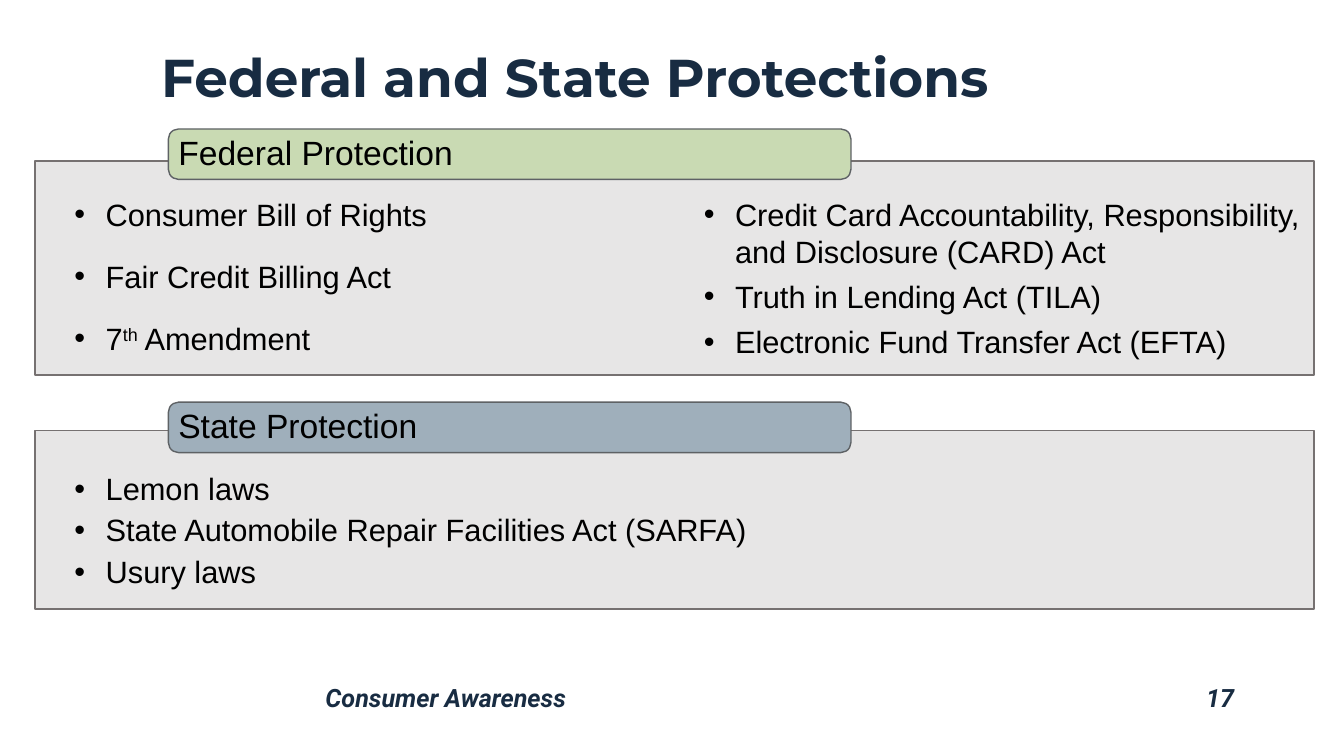
from lxml import etree
from pptx import Presentation
from pptx.dml.color import RGBColor
from pptx.enum.shapes import MSO_SHAPE
from pptx.enum.text import MSO_ANCHOR, PP_ALIGN
from pptx.oxml.ns import qn
from pptx.util import Inches, Pt

NAVY = RGBColor(0x18, 0x2C, 0x42)
BLACK = RGBColor(0x00, 0x00, 0x00)
PANEL_GRAY = RGBColor(0xE7, 0xE6, 0xE6)
PANEL_LINE = RGBColor(0x76, 0x71, 0x71)
TAB_GREEN = RGBColor(0xC9, 0xDA, 0xB3)
TAB_BLUE = RGBColor(0x9F, 0xAF, 0xBB)
TAB_LINE = RGBColor(0x5E, 0x62, 0x65)

# Content: a paragraph is a list of (text, is superscript) runs or a plain string
TITLE = "Federal and State Protections"
FOOTER = "Consumer Awareness"
PAGE_NUMBER = "17"
SECTIONS = [
    {
        "heading": "Federal Protection", "color": TAB_GREEN,
        "panel": (1.6, 2.12), "tab_top": 1.28,
        "heading_box": (1.67, 1.26, 4.32, 0.52),
        "list_top": 1.89, "columns": 2, "line_spacing": 1.0,
        "items": [
            "Consumer Bill of Rights",
            "Fair Credit Billing Act",
            [("7", False), ("th", True), (" Amendment", False)],
            "Credit Card Accountability, Responsibility, and Disclosure (CARD) Act",
            "Truth in Lending Act (TILA)",
            "Electronic Fund Transfer Act (EFTA)",
        ],
        "space_after": [18, 18, 18, 6, 6, 6],
    },
    {
        "heading": "State Protection", "color": TAB_BLUE,
        "panel": (4.27, 1.77), "tab_top": 3.99,
        "heading_box": (1.67, 4.01, 6.12, 0.48),
        "list_top": 4.65, "columns": 1, "line_spacing": 0.9,
        "items": [
            "Lemon laws",
            "State Automobile Repair Facilities Act (SARFA)",
            "Usury laws",
        ],
        "space_after": [6, 6, 6],
    },
]
PANEL_LEFT, PANEL_WIDTH = 0.35, 12.68
TAB_LEFT, TAB_WIDTH, TAB_HEIGHT = 1.67, 6.77, 0.5

presentation = Presentation()
presentation.slide_width = Inches(13.33)
presentation.slide_height = Inches(7.5)
slide = presentation.slides.add_slide(presentation.slide_layouts[6])


def add_bullet(paragraph):
    properties = paragraph._p.get_or_add_pPr()
    properties.set("marL", str(Inches(0.6)))
    properties.set("indent", str(Inches(-0.31)))
    etree.SubElement(properties, qn("a:buFont")).set("typeface", "Arial")
    etree.SubElement(properties, qn("a:buChar")).set("char", "•")


def add_text(paragraphs, box, size, font="Arial", color=BLACK, bold=False,
             italic=False, align=PP_ALIGN.LEFT, anchor=MSO_ANCHOR.TOP,
             line_spacing=0.9, space_after=None, bullets=False, columns=1):
    frame = slide.shapes.add_textbox(*map(Inches, box)).text_frame
    frame.word_wrap = True
    frame.vertical_anchor = anchor
    if columns > 1:
        frame._txBody.bodyPr.set("numCol", str(columns))
    for index, content in enumerate(paragraphs):
        paragraph = frame.paragraphs[0] if index == 0 else frame.add_paragraph()
        if bullets:
            add_bullet(paragraph)
        paragraph.alignment = align
        paragraph.line_spacing = line_spacing
        paragraph.space_before = Pt(0)
        paragraph.space_after = Pt(space_after[index] if space_after else 0)
        runs = [(content, False)] if isinstance(content, str) else content
        for text, superscript in runs:
            run = paragraph.add_run()
            run.text = text
            run.font.name = font
            run.font.size = Pt(size)
            run.font.bold = bold
            run.font.italic = italic
            run.font.color.rgb = color
            if superscript:
                run.font._element.set("baseline", "30000")


def add_box(kind, box, fill, line, line_width):
    shape = slide.shapes.add_shape(kind, *map(Inches, box))
    shape.shadow.inherit = False
    shape.fill.solid()
    shape.fill.fore_color.rgb = fill
    shape.line.color.rgb = line
    shape.line.width = Pt(line_width)
    return shape


# Title and footer
add_text([TITLE], (1.5, 0.11, 10.84, 1.02), 38, font="Montserrat", color=NAVY,
         bold=True, anchor=MSO_ANCHOR.BOTTOM)
footer_format = {"font": "Roboto", "color": NAVY, "bold": True, "italic": True}
add_text([FOOTER], (3.13, 6.75, 7.63, 0.38), 18, **footer_format)
add_text([PAGE_NUMBER], (10.76, 6.75, 1.58, 0.38), 18, align=PP_ALIGN.RIGHT,
         **footer_format)

# Panels, each with a heading tab and a bulleted list
for section in SECTIONS:
    top, height = section["panel"]
    add_box(MSO_SHAPE.RECTANGLE, (PANEL_LEFT, top, PANEL_WIDTH, height),
            PANEL_GRAY, PANEL_LINE, 1.25)
    tab = add_box(MSO_SHAPE.ROUNDED_RECTANGLE,
                  (TAB_LEFT, section["tab_top"], TAB_WIDTH, TAB_HEIGHT),
                  section["color"], TAB_LINE, 1)
    tab.adjustments[0] = 0.2
    add_text([section["heading"]], section["heading_box"], 24,
             line_spacing=section["line_spacing"])
    list_top = section["list_top"]
    add_text(section["items"],
             (PANEL_LEFT, list_top, PANEL_WIDTH, top + height - list_top), 22,
             line_spacing=section["line_spacing"], bullets=True,
             space_after=section["space_after"], columns=section["columns"])

presentation.save("out.pptx")
